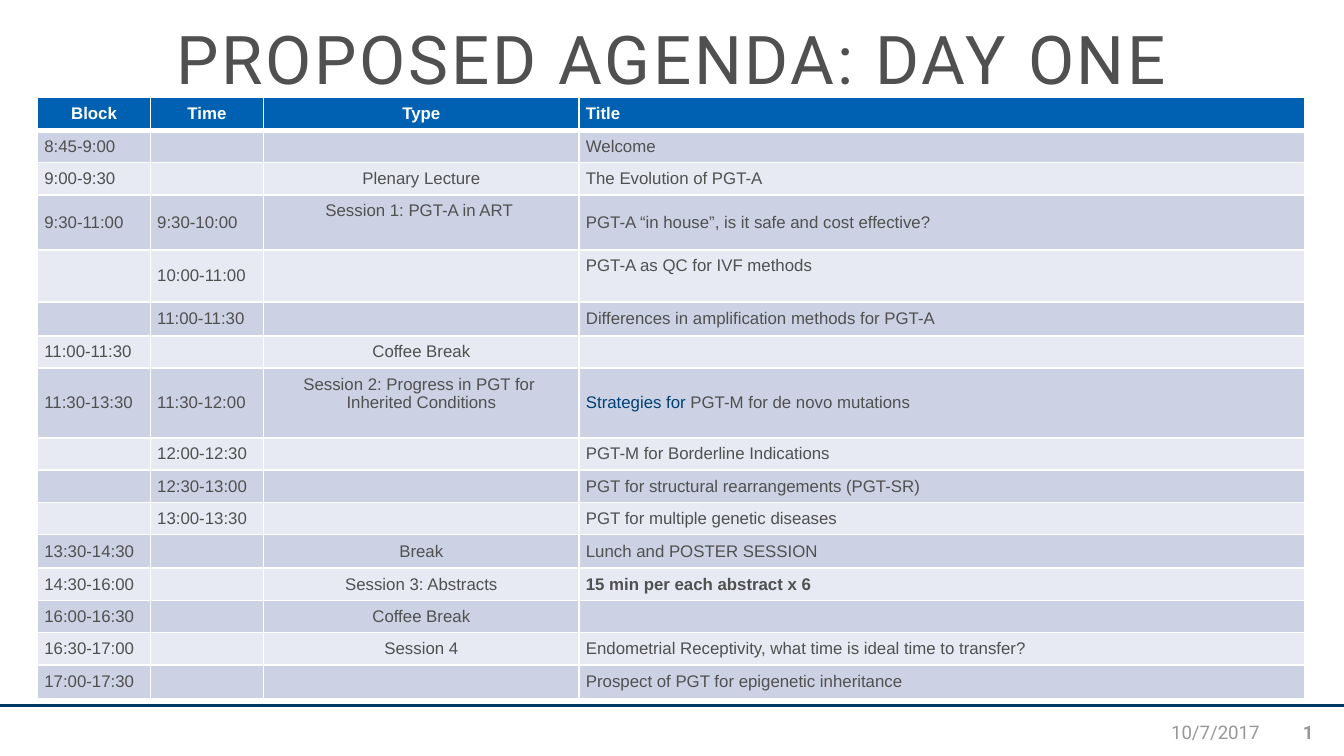
from lxml import etree
from pptx import Presentation
from pptx import util as u
from pptx.dml.color import RGBColor
from pptx.enum import shapes, text
from pptx.oxml.ns import qn

COLORS = {
    "white": "FFFFFF", "header": "0061B2", "band_dark": "CCD2E4",
    "band_light": "E7EAF2", "body": "505050", "accent": "004074",
    "rule": "003765", "footer": "989898",
}
ALIGN = {"l": text.PP_ALIGN.LEFT, "c": text.PP_ALIGN.CENTER, "r": text.PP_ALIGN.RIGHT}
COLUMN_WIDTHS = [0.84, 0.84, 2.35, 5.4]

# Each row: height, then block, time, type and title
AGENDA = [
    (0.25, "Block", "Time", "Type", "Title"),
    (0.24, "8:45-9:00", "", "", "Welcome"),
    (0.24, "9:00-9:30", "", "Plenary Lecture", "The Evolution of PGT-A"),
    (0.41, "9:30-11:00", "9:30-10:00", "Session 1: PGT-A in ART ",
     "PGT-A “in house”, is it safe and cost effective?"),
    (0.39, "", "10:00-11:00", "", "PGT-A as QC for IVF methods"),
    (0.25, "", "11:00-11:30", "", "Differences in amplification methods for PGT-A"),
    (0.24, "11:00-11:30", "", "Coffee Break", ""),
    (0.52, "11:30-13:30", "11:30-12:00",
     "Session 2: Progress in PGT for  Inherited Conditions",
     "Strategies for PGT-M for de novo mutations"),
    (0.24, "", "12:00-12:30", "", "PGT-M for Borderline Indications"),
    (0.24, "", "12:30-13:00", "", "PGT for structural rearrangements (PGT-SR)"),
    (0.24, "", "13:00-13:30", "", "PGT for multiple genetic diseases"),
    (0.25, "13:30-14:30", "", "Break", "Lunch and POSTER SESSION"),
    (0.24, "14:30-16:00", "", "Session 3: Abstracts", "15 min per each abstract x 6"),
    (0.24, "16:00-16:30", "", "Coffee Break", ""),
    (0.24, "16:30-17:00", "", "Session 4",
     "Endometrial Receptivity, what time is ideal time to transfer?"),
    (0.25, "17:00-17:30", "", "", "Prospect of PGT for epigenetic inheritance"),
]
TOP_ALIGNED = {(3, 2), (4, 3), (7, 2)}
BOLD_CELLS = {(12, 3)}
ACCENT_START = "Strategies for "


def rgb(name):
    return RGBColor.from_string(COLORS[name])


def add_run(p, content, size=9, font="Arial", color="body", bold=False, spacing=0):
    r = p.add_run()
    r.text = content
    r.font.size, r.font.name, r.font.bold = u.Pt(size), font, bold
    r.font.color.rgb = rgb(color)
    if spacing:
        r.font._element.set("spc", str(int(spacing * 100)))


class AgendaSlide:
    def __init__(self, s):
        self.s = s

    def label(self, content, left, top, width, height, align="c", line=None, **fmt):
        box = self.s.shapes.add_textbox(*map(u.Inches, (left, top, width, height)))
        tf = box.text_frame
        tf.word_wrap = True
        tf.vertical_anchor = text.MSO_ANCHOR.MIDDLE
        p = tf.paragraphs[0]
        p.alignment = ALIGN[align]
        if line:
            p.line_spacing = line
        add_run(p, content, font="Roboto", **fmt)

    def rule(self, x1, y1, x2, y2, width):
        c = self.s.shapes.add_connector(
            shapes.MSO_CONNECTOR.STRAIGHT, *map(u.Inches, (x1, y1, x2, y2)))
        c.line.color.rgb, c.line.width = rgb("rule"), u.Pt(width)
        etree.SubElement(c._element.spPr, qn("a:effectLst"))

    def borders(self, cell, top, bottom):
        tc_pr = cell._tc.get_or_add_tcPr()
        sides = [("L", 1), ("R", 1), ("T", top), ("B", bottom)]
        for i, (side, width) in enumerate(sides):
            ln = etree.Element(qn(f"a:ln{side}"), w=str(u.Pt(width)))
            fill = etree.SubElement(ln, qn("a:solidFill"))
            etree.SubElement(fill, qn("a:srgbClr"), val=COLORS["white"])
            tc_pr.insert(i, ln)

    def cell(self, cell, row, col, content):
        header = row == 0
        band = "header" if header else "band_dark" if row % 2 else "band_light"
        cell.fill.solid()
        cell.fill.fore_color.rgb = rgb(band)
        self.borders(cell, 3 if row == 1 else 1, 3 if header else 1)
        top = (row, col) in TOP_ALIGNED
        cell.margin_left = cell.margin_right = u.Inches(0.05)
        cell.margin_top = cell.margin_bottom = u.Inches(0.05 if top else 0.04)
        cell.vertical_anchor = text.MSO_ANCHOR.TOP if top else text.MSO_ANCHOR.MIDDLE
        p = cell.text_frame.paragraphs[0]
        p.alignment = ALIGN["c" if col == 2 or header and col < 3 else "l"]
        if not content:  # keeps empty cells from stretching their row
            etree.SubElement(p._p, qn("a:endParaRPr"), sz="900")
            return
        if content.startswith(ACCENT_START):
            add_run(p, ACCENT_START, color="accent")
            content = content[len(ACCENT_START):]
        add_run(p, content, color="white" if header else "body",
                bold=header or (row, col) in BOLD_CELLS)

    def table(self, rows, widths, left, top):
        height = sum(row[0] for row in rows)
        frame = self.s.shapes.add_table(
            len(rows), len(widths),
            *map(u.Inches, (left, top, sum(widths), height)))
        table = frame.table
        for column, width in zip(table.columns, widths):
            column.width = u.Inches(width)
        for i, (row_height, *contents) in enumerate(rows):
            table.rows[i].height = u.Inches(row_height)
            for j, content in enumerate(contents):
                self.cell(table.cell(i, j), i, j, content)


def main():
    prs = Presentation()
    prs.slide_width, prs.slide_height = u.Inches(10), u.Inches(10 * 9 / 16)
    slide = AgendaSlide(prs.slides.add_slide(prs.slide_layouts[6]))

    # Footer rule and title
    slide.rule(0, 5.25, 10, 5.25, 2)
    slide.label("PROPOSED AGENDA: DAY ONE", 0.5, 0, 9, 0.94,
                line=0.9, size=36, spacing=1.5)

    # Date and page number
    slide.label("10/7/2017", 7.14, 5.3, 2.33, 0.3, align="r", size=10, color="footer")
    slide.label("1", 9.52, 5.3, 0.43, 0.3, size=10, color="footer", bold=True)

    # Agenda
    slide.table(AGENDA, COLUMN_WIDTHS, 0.28, 0.72)
    prs.save("out.pptx")


if __name__ == "__main__":
    main()
